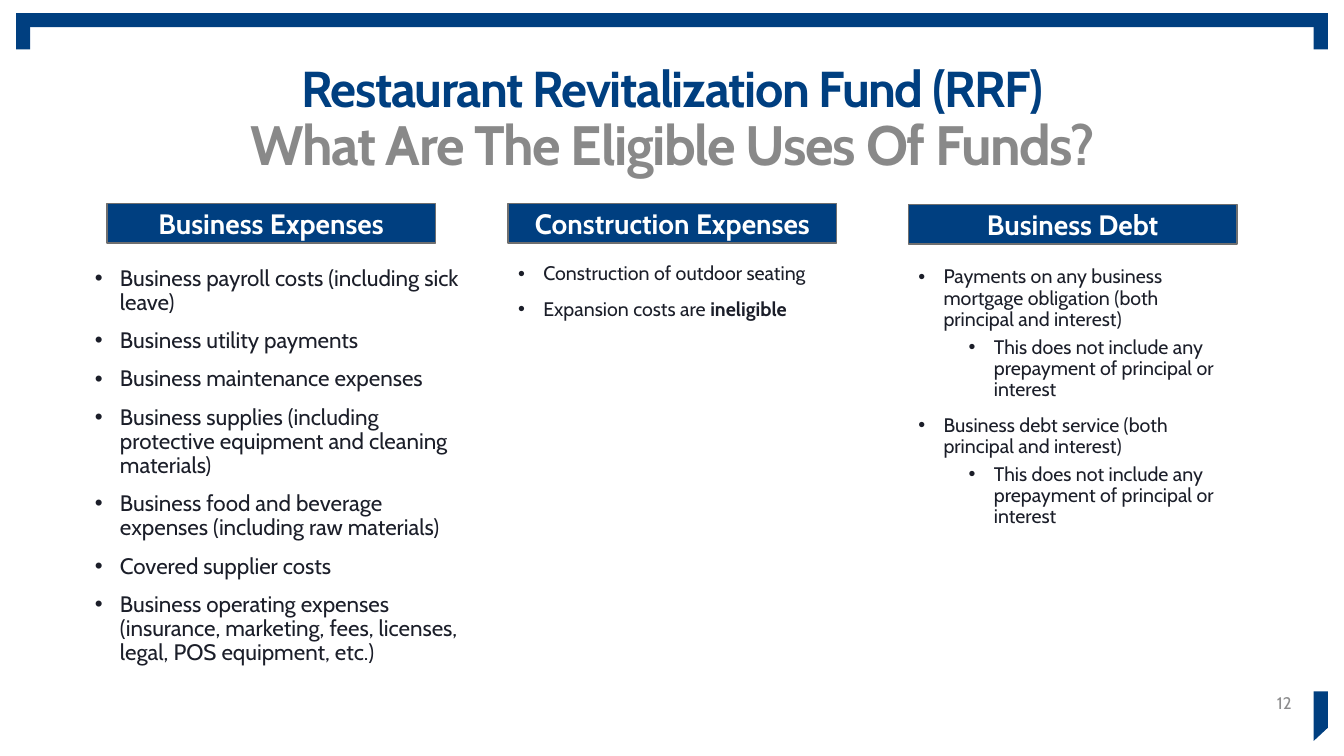
import pptx
import pptx.util
import pptx.dml.color
import pptx.enum.shapes
import pptx.enum.text
import pptx.oxml.ns
from lxml import etree

ALIGN = pptx.enum.text.PP_ALIGN
ANCHOR = pptx.enum.text.MSO_ANCHOR
COLORS = {
    "navy": "003F80", "grey": "898989", "border": "6F6F6F",
    "ink": "1B1E29", "number": "8D8D8E", "white": "FFFFFF",
}
DEBT_LIMIT = (1, "This does not include any prepayment of principal or interest")
EXPENSES = [
    (0, "Business payroll costs (including sick leave)"),
    (0, "Business utility payments"),
    (0, "Business maintenance expenses"),
    (0, "Business supplies (including protective equipment and cleaning materials)"),
    (0, "Business food and beverage expenses (including raw materials)"),
    (0, "Covered supplier costs"),
    (0, "Business operating expenses (insurance, marketing, fees, licenses, legal, POS equipment, etc.)"),
]
CONSTRUCTION = [
    (0, "Construction of outdoor seating"),
    (0, "Expansion costs are ", "ineligible"),
]
DEBT = [
    (0, "Payments on any business mortgage obligation (both principal and interest)"),
    DEBT_LIMIT,
    (0, "Business debt service (both principal and interest)"),
    DEBT_LIMIT,
]


def px(length):
    """Turn px, 100 to the inch, into EMU."""
    return pptx.util.Emu(length * 9144)


def rgb(name):
    return pptx.dml.color.RGBColor.from_string(COLORS[name])


def write(para, text, *, size, color, bold=False, tracking=0):
    """Add a run; tracking is in points."""
    span = para.add_run()
    span.text = text
    span.font.name = "Cabin"
    span.font.size = pptx.util.Pt(size)
    span.font.bold = bold
    span.font.color.rgb = rgb(color)
    if tracking:
        span.font._element.set("spc", str(tracking * 100))


class Page:
    def __init__(self, deck):
        self.slide = deck.slides.add_slide(deck.slide_layouts[1])
        self.shapes = self.slide.shapes

    def paint(self, shape, line=None):
        shape.shadow.inherit = False
        shape.fill.solid()
        shape.fill.fore_color.rgb = rgb("navy")
        if line:
            shape.line.color.rgb = rgb(line)
            shape.line.width = pptx.util.Pt(1)
        else:
            shape.line.fill.background()

    def bar(self, left, top, width, height, line=None):
        kind = pptx.enum.shapes.MSO_SHAPE.RECTANGLE
        shape = self.shapes.add_shape(kind, px(left), px(top), px(width), px(height))
        self.paint(shape, line)
        return shape

    def outline(self, points):
        builder = self.shapes.build_freeform(*points[0], scale=px(1))
        builder.add_line_segments(points[1:], close=True)
        self.paint(builder.convert_to_shape())

    def text_frame(self, left, top, width, height, box=None, anchor=ANCHOR.TOP):
        """Set up a placeholder, or a new text box when none is given."""
        if box is None:
            box = self.shapes.add_textbox(0, 0, 0, 0)
        box.left, box.top, box.width, box.height = map(px, (left, top, width, height))
        frame = box.text_frame
        frame.word_wrap = True
        frame.auto_size = pptx.enum.text.MSO_AUTO_SIZE.NONE
        frame.vertical_anchor = anchor
        return frame

    def title(self, lines):
        frame = self.text_frame(92, 58, 1150, 90, self.shapes.title)
        for index, (text, size, color) in enumerate(lines):
            para = frame.add_paragraph() if index else frame.paragraphs[0]
            para.alignment = ALIGN.CENTER
            para.line_spacing = 0.9
            write(para, text, size=size, color=color, bold=True, tracking=-1)

    def heading(self, text, left, top):
        frame = self.bar(left, top, 326, 39, "border").text_frame
        frame.vertical_anchor = ANCHOR.MIDDLE
        para = frame.paragraphs[0]
        para.alignment = ALIGN.CENTER
        write(para, text, size=20, color="white", bold=True)

    def bullets(self, items, left, top, width, size, box=None):
        """Fill a list; each item is a level, a text and an optional bold ending."""
        frame = self.text_frame(left, top, width, 460, box)
        for index, (level, text, *endings) in enumerate(items):
            para = frame.add_paragraph() if index else frame.paragraphs[0]
            para.level = level
            para.alignment = ALIGN.LEFT
            para.line_spacing = 0.9
            para.space_before = pptx.util.Pt((5 if level else 10) if index else 0)
            props = para._p.get_or_add_pPr()
            props.set("marL", str(px(25 + 50 * level)))
            props.set("indent", str(px(-25)))
            qn = pptx.oxml.ns.qn
            etree.SubElement(props, qn("a:buFont"), typeface="Arial")
            etree.SubElement(props, qn("a:buChar"), char="•")
            write(para, text, size=size, color="ink")
            for ending in endings:
                write(para, ending, size=size, color="ink", bold=True)

    def number(self, text):
        frame = self.text_frame(991, 677, 300, 40, anchor=ANCHOR.MIDDLE)
        para = frame.paragraphs[0]
        para.alignment = ALIGN.RIGHT
        write(para, text, size=12, color="number")


def main():
    deck = pptx.Presentation()
    deck.slide_width, deck.slide_height = px(1333), px(750)
    page = Page(deck)

    page.bar(16, 13, 1301, 14)
    for left in (16, 1303):
        page.bar(left, 13, 14, 36)
    page.outline([(1303, 686), (1317, 686), (1317, 722), (1303, 735)])

    page.title([
        ("Restaurant Revitalization Fund (RRF)", 36, "navy"),
        ("What Are The Eligible Uses Of Funds?", 39.6, "grey"),
    ])
    page.heading("Business Expenses", 106, 202)
    page.bullets(EXPENSES, 84, 260, 384, 16, page.slide.placeholders[1])
    page.heading("Construction Expenses", 504, 202)
    page.bullets(CONSTRUCTION, 504, 257, 326, 14)
    page.heading("Business Debt", 901, 203)
    page.bullets(DEBT, 901, 260, 326, 14)
    page.number("12")
    deck.save("out.pptx")


if __name__ == "__main__":
    main()
